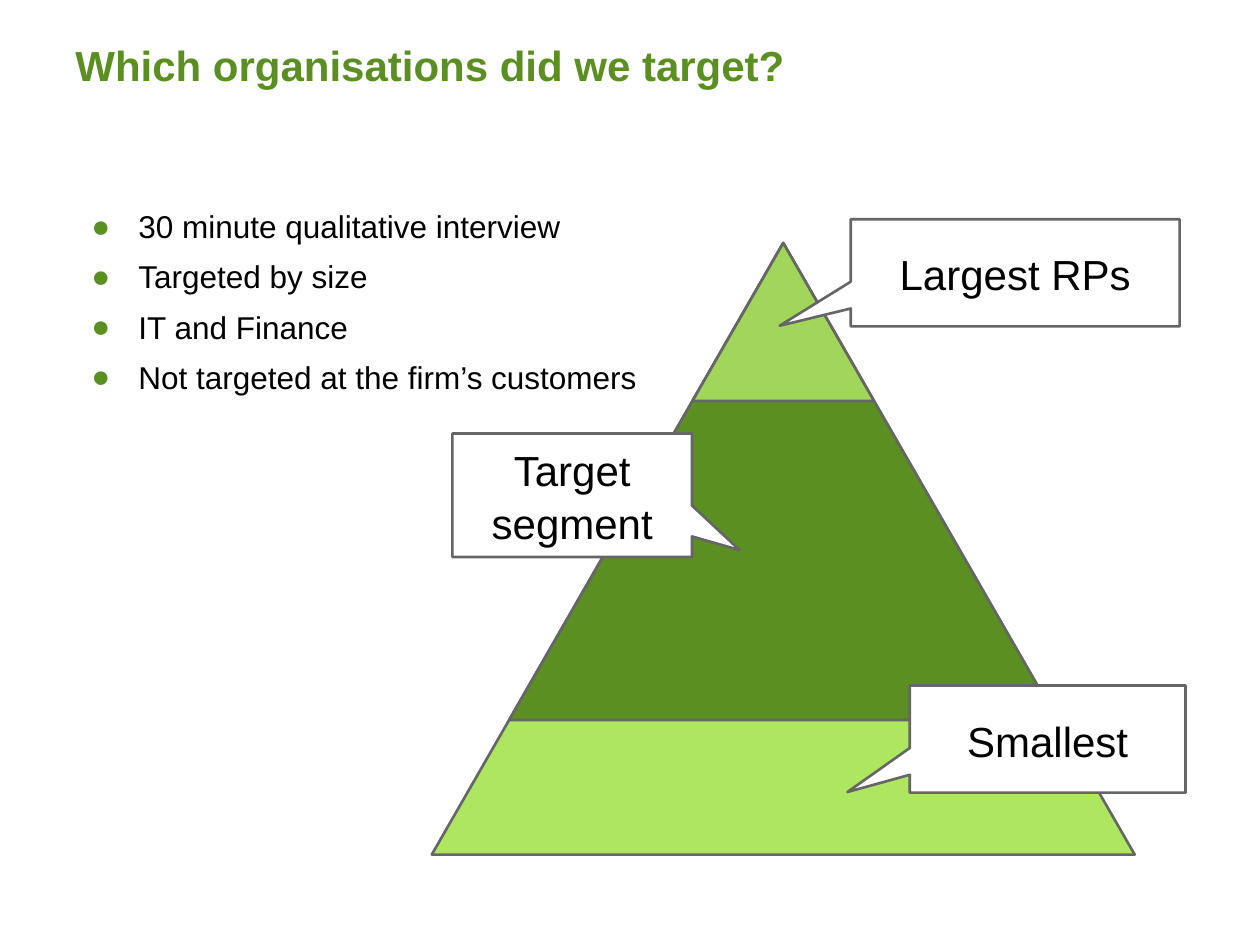
from dataclasses import dataclass

from lxml import etree
from pptx import Presentation
from pptx.dml.color import RGBColor
from pptx.enum import shapes, text
from pptx.oxml import ns
from pptx.util import Cm, Pt


@dataclass(frozen=True)
class Theme:
    font: str = "Arial"
    green: str = "5B8F22"
    light: str = "AEE660"
    mid: str = "A2D65A"
    white: str = "FFFFFF"
    black: str = "000000"
    outline: str = "666666"
    large: int = 24
    body: int = 18
    line: float = 1.5
    leading: float = 1.05


theme = Theme()


def format_text(frame, size, color, bold=False):
    frame.word_wrap = True
    frame.auto_size = text.MSO_AUTO_SIZE.NONE
    frame.margin_left = frame.margin_right = Cm(0.25)
    frame.margin_top = frame.margin_bottom = Cm(0.25)
    for para in frame.paragraphs:
        para.line_spacing = theme.leading
        for span in para.runs:
            span.font.name = theme.font
            span.font.size = Pt(size)
            span.font.bold = bold
            span.font.color.rgb = RGBColor.from_string(color)


def add_outlined(kind, left, top, width, height, fill):
    shape = page.shapes.add_shape(kind, Cm(left), Cm(top), Cm(width), Cm(height))
    shape.shadow.inherit = False
    shape.fill.solid()
    shape.fill.fore_color.rgb = RGBColor.from_string(fill)
    shape.line.color.rgb = RGBColor.from_string(theme.outline)
    shape.line.width = Pt(theme.line)
    return shape


deck = Presentation()
deck.slide_width, deck.slide_height = Cm(25.4), Cm(19.05)
page = deck.slides.add_slide(deck.slide_layouts[1])

title = page.shapes.title
title.left, title.top, title.width, title.height = Cm(1.27), Cm(0.76), Cm(20.32), Cm(1.02)
title.text_frame.text = "Which organisations did we target?"
title.text_frame.vertical_anchor = text.MSO_ANCHOR.MIDDLE
title.text_frame.paragraphs[0].alignment = text.PP_ALIGN.LEFT
format_text(title.text_frame, theme.large, theme.green, bold=True)

apex_x, apex_y, slope = 15.79, 4.9, 0.87
for width, fill in [(14.17, theme.light), (11.05, theme.green), (3.66, theme.mid)]:
    add_outlined(shapes.MSO_SHAPE.FLOWCHART_EXTRACT,
                 apex_x - width / 2, apex_y, width, width * slope, fill)

callouts = [
    ("Largest RPs", 17.15, 4.42, 6.63, 2.16, -0.716, 0.494),
    ("Target segment", 9.12, 8.74, 4.83, 2.49, 0.699, 0.444),
    ("Smallest", 18.34, 13.82, 5.56, 2.16, -0.726, 0.494),
]
for label, left, top, width, height, tip_x, tip_y in callouts:
    callout = add_outlined(shapes.MSO_SHAPE.ROUNDED_RECTANGULAR_CALLOUT,
                           left, top, width, height, theme.white)
    for index, value in enumerate((tip_x, tip_y, 0)):
        callout.adjustments[index] = value
    callout.text_frame.text = label
    callout.text_frame.vertical_anchor = text.MSO_ANCHOR.MIDDLE
    callout.text_frame.paragraphs[0].alignment = text.PP_ALIGN.CENTER
    format_text(callout.text_frame, theme.large, theme.black)

body = page.placeholders[1]
body.left, body.top, body.width, body.height = Cm(1.27), Cm(3.89), Cm(12.7), Cm(3.38)
body.text_frame.text = "\n".join([
    "30 minute qualitative interview",
    "Targeted by size",
    "IT and Finance",
    "Not targeted at the firm’s customers",
])
for index, para in enumerate(body.text_frame.paragraphs):
    props = para._p.get_or_add_pPr()
    props.set("marL", str(Cm(1.27)))
    props.set("indent", str(-Cm(0.95)))
    bullet_color = etree.SubElement(props, ns.qn("a:buClr"))
    etree.SubElement(bullet_color, ns.qn("a:srgbClr"), val=theme.green)
    etree.SubElement(props, ns.qn("a:buFont"), typeface=theme.font)
    etree.SubElement(props, ns.qn("a:buChar"), char="●")
    para.space_before = Pt(6 if index else 0)
format_text(body.text_frame, theme.body, theme.black)

deck.save("out.pptx")
